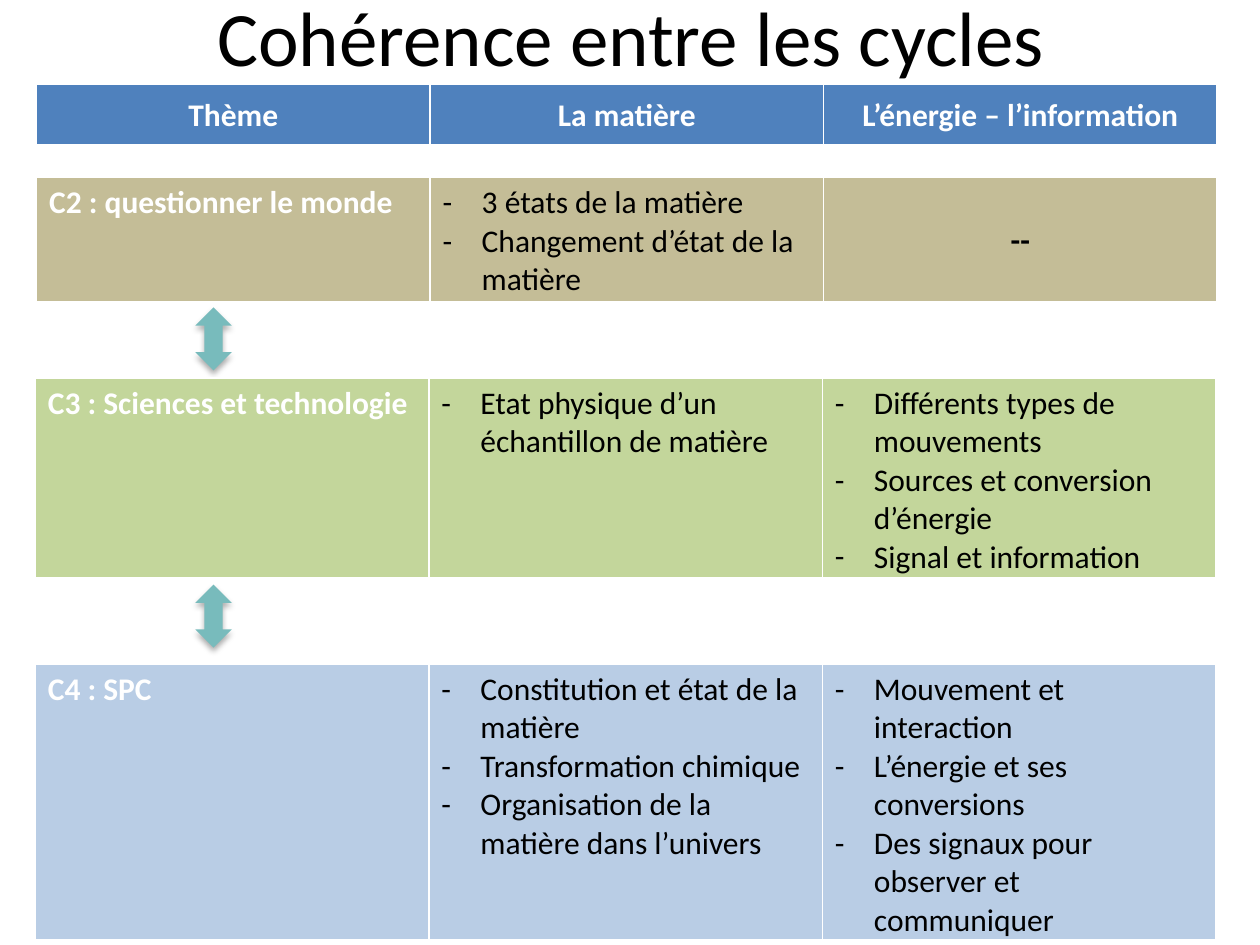
from lxml.etree import SubElement
from pptx import Presentation
from pptx.dml.color import RGBColor
from pptx.enum.shapes import MSO_SHAPE as Shape
from pptx.enum.text import MSO_ANCHOR as Anchor, PP_ALIGN as Align
from pptx.oxml import parse_xml
from pptx.oxml.ns import nsdecls, qn
from pptx.util import Inches, Pt

COLORS = {
    "text": "000000",
    "light": "FFFFFF",
    "header": "4F81BD",
    "cycle2": "C4BD97",
    "cycle3": "C3D69B",
    "cycle4": "B9CDE5",
    "arrow": "78BBBC",
}
GRID_COLUMNS, GRID_ROWS = 100, 75
BORDERS = {"L": 1, "R": 1, "T": 1, "B": 3}

BANDS = [
    ("header", (2.9, 6.7, 4.9), ["Thème", "La matière", "L’énergie – l’information"]),
    ("cycle2", (2.9, 14.1, 10), [
        "C2 : questionner le monde",
        ["3 états de la matière", "Changement d’état de la matière"],
        "--",
    ]),
    ("cycle3", (2.8, 30, 16), [
        "C3 : Sciences et technologie",
        ["Etat physique d’un échantillon de matière"],
        ["Différents types de mouvements", "Sources et conversion d’énergie",
         "Signal et information"],
    ]),
    ("cycle4", (2.8, 52.7, 22), [
        "C4 : SPC",
        ["Constitution et état de la matière", "Transformation chimique",
         "Organisation de la matière dans l’univers"],
        ["Mouvement et interaction", "L’énergie et ses conversions",
         "Des signaux pour observer et communiquer"],
    ]),
]


class SlideBuilder:
    font = "Calibri"
    body_size = 18
    title_size = 44

    def __init__(self, deck):
        self.slide = deck.slides.add_slide(deck.slide_layouts[6])
        self.column = deck.slide_width / GRID_COLUMNS
        self.row = deck.slide_height / GRID_ROWS

    def box(self, left, top, width, height):
        return (round(left * self.column), round(top * self.row),
                round(width * self.column), round(height * self.row))

    def color(self, name):
        return RGBColor.from_string(COLORS[name])

    def paint(self, target, name):
        target.fill.solid()
        target.fill.fore_color.rgb = self.color(name)

    def format_runs(self, paragraph, size, color, bold=False):
        for run in paragraph.runs:
            run.font.name = self.font
            run.font.size = Pt(size)
            run.font.bold = bold
            run.font.color.rgb = self.color(color)

    def title(self, text, *place):
        frame = self.slide.shapes.add_textbox(*self.box(*place)).text_frame
        frame.word_wrap = True
        frame.vertical_anchor = Anchor.MIDDLE
        frame.text = text
        frame.paragraphs[0].alignment = Align.CENTER
        self.format_runs(frame.paragraphs[0], self.title_size, "text")

    def arrow(self, *place):
        arrow = self.slide.shapes.add_shape(Shape.UP_DOWN_ARROW, *self.box(*place))
        self.paint(arrow, "arrow")
        arrow.line.fill.background()
        arrow.shadow.inherit = False
        effects = arrow.element.spPr.find(qn("a:effectLst"))
        shadow = SubElement(effects, qn("a:outerShdw"), blurRad=str(Pt(3.5)),
                            dist=str(Pt(2.2)), dir="5400000", rotWithShape="0")
        shade = SubElement(shadow, qn("a:srgbClr"), val=COLORS["text"])
        SubElement(shade, qn("a:alpha"), val="32000")

    def dash(self, paragraph):
        properties = paragraph._p.get_or_add_pPr()
        properties.set("marL", str(Inches(0.31)))
        properties.set("indent", str(-Inches(0.31)))
        SubElement(properties, qn("a:buFont"), typeface=self.font)
        SubElement(properties, qn("a:buChar"), char="-")

    def borders(self, cell):
        properties = cell._tc.get_or_add_tcPr()
        for position, (side, width) in enumerate(BORDERS.items()):
            properties.insert(position, parse_xml(
                f'<a:ln{side} {nsdecls("a")} w="{Pt(width)}"><a:solidFill>'
                f'<a:srgbClr val="{COLORS["light"]}"/></a:solidFill></a:ln{side}>'))

    def cell(self, cell, content, fill, is_theme):
        is_header = fill == "header"
        is_list = isinstance(content, list)
        is_centered = is_header or not (is_theme or is_list)
        self.paint(cell, fill)
        self.borders(cell)
        cell.text_frame.text = "\n".join(content) if is_list else content
        if is_centered:
            cell.vertical_anchor = Anchor.MIDDLE
        for paragraph in cell.text_frame.paragraphs:
            if is_list:
                self.dash(paragraph)
            elif is_centered:
                paragraph.alignment = Align.CENTER
            self.format_runs(paragraph, self.body_size,
                             "light" if is_header or is_theme else "text", not is_list)

    def band(self, fill, place, contents):
        left, top, height = place
        frame = self.slide.shapes.add_table(
            1, len(contents), *self.box(left, top, 93.7, height))
        for index, content in enumerate(contents):
            self.cell(frame.table.cell(0, index), content, fill, index == 0)


def main():
    deck = Presentation()
    deck.slide_width, deck.slide_height = Inches(10), Inches(7.5)
    builder = SlideBuilder(deck)
    builder.title("Cohérence entre les cycles", 5.1, -3.4, 90, 12.5)
    for top in (24.4, 46.4):
        builder.arrow(15.5, top, 2.9, 5)
    for band in BANDS:
        builder.band(*band)
    deck.save("out.pptx")


if __name__ == "__main__":
    main()
